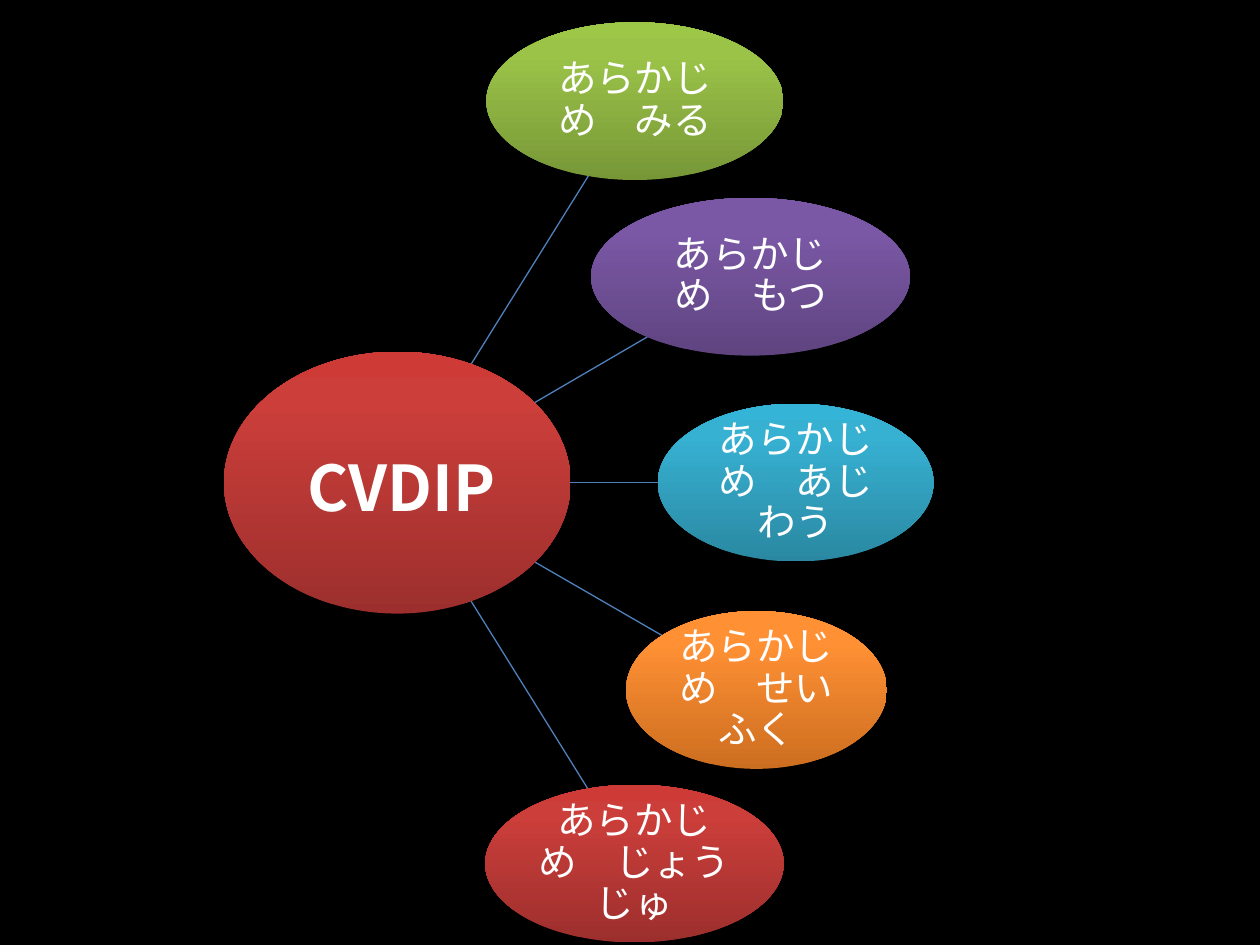
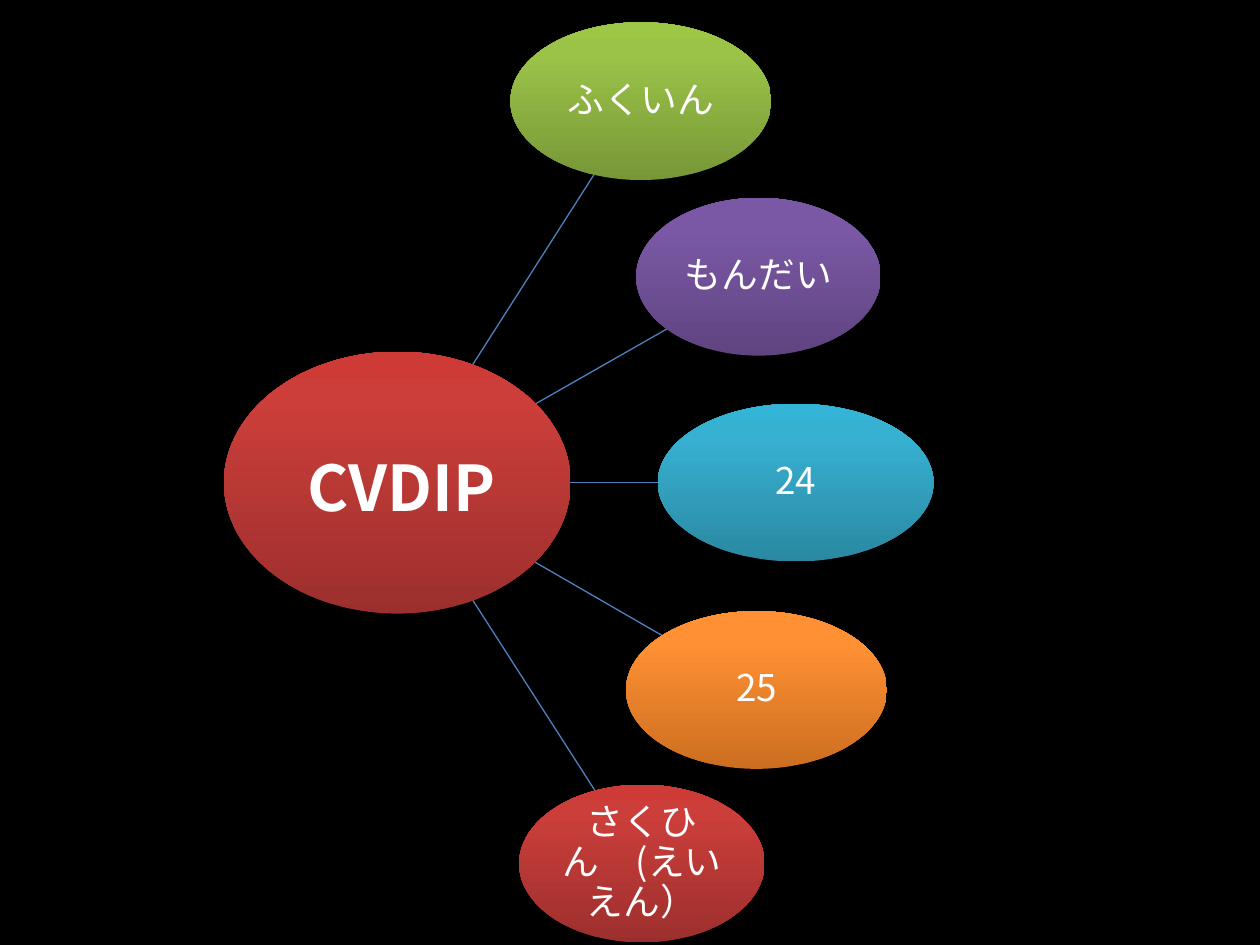
from copy import deepcopy
from dataclasses import dataclass
from math import hypot

from lxml.etree import SubElement
from pptx import Presentation
from pptx.dml.color import RGBColor
from pptx.enum.shapes import MSO_CONNECTOR, MSO_SHAPE
from pptx.enum.text import MSO_ANCHOR, PP_ALIGN
from pptx.oxml.ns import qn
from pptx.util import Cm, Pt


@dataclass(frozen=True)
class Theme:
    font: str = "Noto Sans CJK KR"
    background: str = "000000"
    text: str = "FFFFFF"
    spoke: str = "4F81BD"
    spoke_width: float = 0.75
    hub_size: int = 36
    # Gradient colours from bottom to top
    red: tuple = ("9C2F2D", "CB3E3A", "CE3B37")
    green: tuple = ("779737", "9BC348", "9DC746")
    purple: tuple = ("5F4480", "7B58A6", "7C57A8")
    teal: tuple = ("2A88A2", "37B1D2", "34B4D6")
    orange: tuple = ("CC6E20", "FF9034", "FF9136")
    stops: tuple = (0, 0.8, 1)


THEME = Theme()

# Shared layout in cm: centre x, centre y, width, height
HUB = (8.01, 9.73, 6.99, 5.28)
HUB_LABEL = (8.1, 9.8, 6.2, 3.35)
SPOKE_START = 2.1
NODE_HEIGHT = 3.18
NODE_ROWS = (2.04, 5.58, 9.73, 13.91, 17.41)
NODE_COLOURS = (THEME.green, THEME.purple, THEME.teal, THEME.orange, THEME.red)

# Each slide: type size, text inset in cm, and nodes as (label, centre x, width)
SLIDES = (
    (22, 0.05, (
        ("あらかじめ　みる", 12.8, 5.99),
        ("あらかじめ　もつ", 15.13, 6.43),
        ("あらかじめ　あじわう", 16.04, 5.56),
        ("あらかじめ　せいふく", 15.25, 5.26),
        ("あらかじめ　じょうじゅ", 12.79, 6.02),
    )),
    (21, 0.03, (
        ("ふくいん", 12.92, 5.26),
        ("もんだい", 15.29, 4.93),
        ("24", 16.04, 5.56),
        ("25", 15.25, 5.26),
        ("さくひん　(えいえん）", 12.94, 4.95),
    )),
)


def set_background(s):
    fill = s.background.fill
    fill.solid()
    fill.fore_color.rgb = RGBColor.from_string(THEME.background)


def add_ellipse(s, box, colours=None):
    """Ellipse centred on a point, with a gradient or no fill."""
    x, y, w, h = box
    sp = s.shapes.add_shape(MSO_SHAPE.OVAL, Cm(x - w / 2), Cm(y - h / 2), Cm(w), Cm(h))
    sp.shadow.inherit = False
    sp.line.fill.background()
    if colours is None:
        sp.fill.background()
        return sp
    sp.fill.gradient()
    sp.fill.gradient_angle = 90
    gs_list = sp._element.spPr.find(".//" + qn("a:gsLst"))
    gs_list.append(deepcopy(gs_list[-1]))
    for stop, position, colour in zip(sp.fill.gradient_stops, THEME.stops, colours):
        stop.position = position
        stop.color.rgb = RGBColor.from_string(colour)
    return sp


def set_label(sp, text, size, bold=False, spacing=1.0):
    tf = sp.text_frame
    tf.text = text
    tf.word_wrap = True
    tf.vertical_anchor = MSO_ANCHOR.MIDDLE
    p = tf.paragraphs[0]
    p.alignment = PP_ALIGN.CENTER
    p.line_spacing = spacing
    r = p.runs[0]
    r.font.name = THEME.font
    r.font.size = Pt(size)
    r.font.bold = bold
    r.font.color.rgb = RGBColor.from_string(THEME.text)
    SubElement(r.font._element, qn("a:ea"), typeface=THEME.font)


def set_insets(tf, inset):
    tf.margin_left = tf.margin_right = tf.margin_top = tf.margin_bottom = Cm(inset)


def add_spoke(s, node):
    """Line along the hub-to-node axis, ending on the node's edge."""
    hub_x, hub_y = HUB[:2]
    x, y, w, h = node
    dx, dy = x - hub_x, y - hub_y
    start = SPOKE_START / hypot(dx, dy)
    end = 1 - 1 / hypot(dx / (w / 2), dy / (h / 2))
    line = s.shapes.add_connector(
        MSO_CONNECTOR.STRAIGHT,
        Cm(hub_x + dx * start), Cm(hub_y + dy * start),
        Cm(hub_x + dx * end), Cm(hub_y + dy * end),
    )
    line.line.color.rgb = RGBColor.from_string(THEME.spoke)
    line.line.width = Pt(THEME.spoke_width)
    SubElement(line._element.spPr, qn("a:effectLst"))


def add_radial_slide(prs, size, inset, nodes):
    s = prs.slides.add_slide(prs.slide_layouts[6])
    set_background(s)
    boxes = [(x, y, w, NODE_HEIGHT) for (_, x, w), y in zip(nodes, NODE_ROWS)]
    # Spokes lie behind the ellipses
    for box in reversed(boxes):
        add_spoke(s, box)
    add_ellipse(s, HUB, THEME.red)
    # Outer nodes
    for (label, _, _), box, colours in zip(nodes, boxes, NODE_COLOURS):
        sp = add_ellipse(s, box, colours)
        set_label(sp, label, size, spacing=0.9)
        set_insets(sp.text_frame, inset)
    # Hub label
    set_label(add_ellipse(s, HUB_LABEL), "CVDIP", THEME.hub_size, bold=True)


def main():
    prs = Presentation()
    prs.slide_width, prs.slide_height = Cm(25.4), Cm(19.05)
    for size, inset, nodes in SLIDES:
        add_radial_slide(prs, size, inset, nodes)
    prs.save("out.pptx")


if __name__ == "__main__":
    main()
